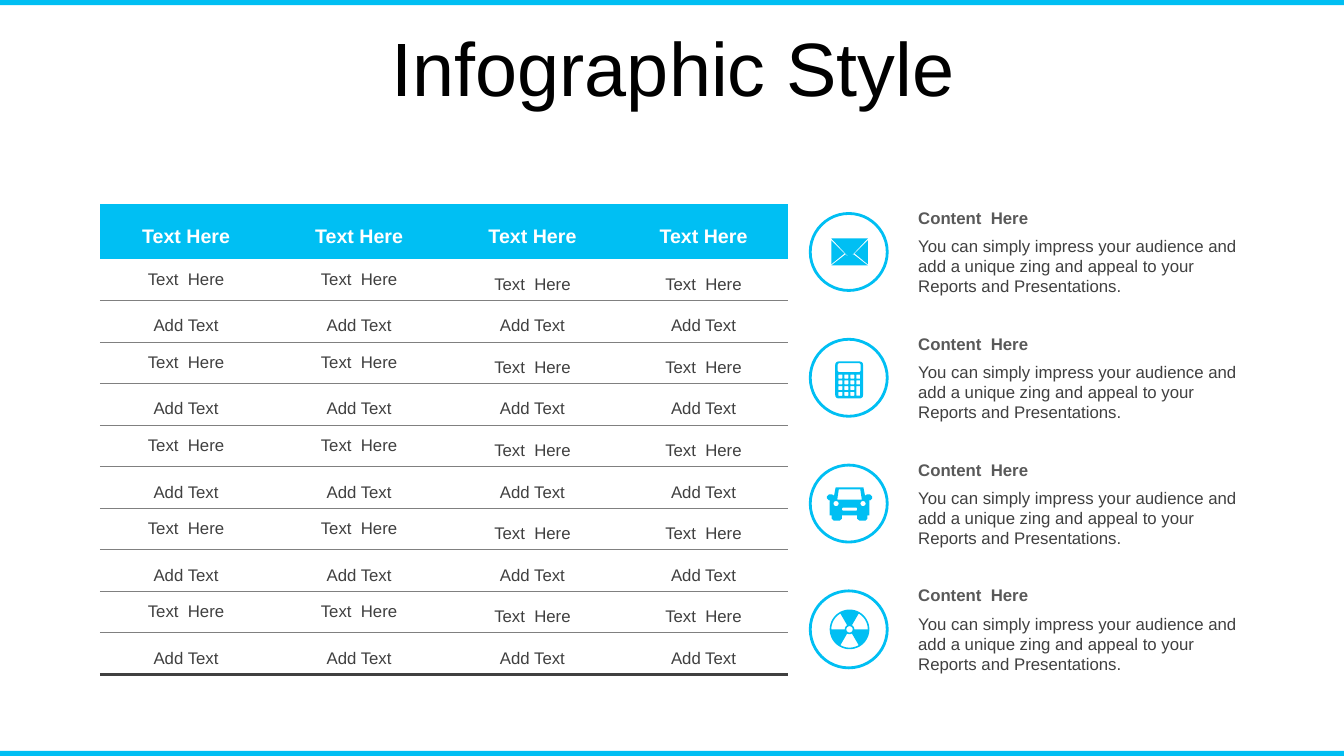
"""Build a slide with a ten-row table and four captioned icons."""
import math

import pptx
import pptx.dml.color
import pptx.enum.shapes
import pptx.enum.text
import pptx.oxml
import pptx.oxml.ns
import pptx.util
from pptx.util import Cm

ACCENT, WHITE, BLACK = "00BFF3", "FFFFFF", "000000"
DARK, HEADING, RULE = "404040", "595959", "808080"
COLUMN_WIDTHS = (4.34, 4.38, 4.36, 4.26)
HEADER_HEIGHT, ROW_HEIGHT, BODY_ROWS = 1.4, 1.046, 10
ITEM_STEP = 3.17
UNITS_PER_CM = 1000
ADVICE = ("You can simply impress your audience and add a unique zing "
          "and appeal to your Reports and Presentations.")
SHAPE = pptx.enum.shapes.MSO_SHAPE
ALIGN = pptx.enum.text.PP_ALIGN
ANCHOR = pptx.enum.text.MSO_ANCHOR


def rgb(color):
    """Turn a hex string into a colour."""
    return pptx.dml.color.RGBColor.from_string(color)


def write(frame, text, size=12, color=DARK, bold=False, align=ALIGN.LEFT,
          spacing=1.0, before=0):
    """Write one formatted paragraph into a text frame."""
    frame.word_wrap = True
    paragraph = frame.paragraphs[0]
    paragraph.alignment = align
    paragraph.line_spacing = spacing
    paragraph.space_before = pptx.util.Pt(before)
    run = paragraph.add_run()
    run.text = text
    run.font.name = "Arial"
    run.font.size = pptx.util.Pt(size)
    run.font.bold = bold
    run.font.color.rgb = rgb(color)


def add_text(shapes, left, top, width, height, text, anchor=ANCHOR.TOP, **style):
    """Add a text box."""
    frame = shapes.add_textbox(Cm(left), Cm(top), Cm(width), Cm(height)).text_frame
    frame.vertical_anchor = anchor
    write(frame, text, **style)


def paint(shape, fill, line=None):
    """Give a shape a flat fill and an optional outline."""
    shape.shadow.inherit = False
    shape.fill.solid()
    shape.fill.fore_color.rgb = rgb(fill)
    if line:
        shape.line.color.rgb = rgb(line)
        shape.line.width = pptx.util.Pt(2)
    else:
        shape.line.fill.background()


def add_shape(shapes, kind, left, top, width, height, fill, line=None):
    """Add a painted preset shape."""
    shape = shapes.add_shape(kind, Cm(left), Cm(top), Cm(width), Cm(height))
    paint(shape, fill, line)


def set_border(cell, side, color=None, width=1):
    """Set one side of a cell's border, or hide it when no colour is given."""
    namespace = pptx.oxml.ns.nsdecls("a")
    fill = (f'<a:solidFill><a:srgbClr val="{color}"/></a:solidFill>'
            if color else "<a:noFill/>")
    border = pptx.oxml.parse_xml(
        f'<a:ln{side} {namespace} w="{pptx.util.Pt(width)}">{fill}</a:ln{side}>')
    cell._tc.get_or_add_tcPr().append(border)


def fill_cell(cell, text, fill, top, bottom, **style):
    """Write, rule and fill one centred table cell."""
    for side, border in (("L", ()), ("R", ()), ("T", top), ("B", bottom)):
        set_border(cell, side, *border)
    cell.fill.solid()
    cell.fill.fore_color.rgb = rgb(fill)
    cell.vertical_anchor = ANCHOR.MIDDLE
    write(cell.text_frame, text, align=ALIGN.CENTER, **style)


def add_text_table(shapes):
    """Add the table with its header and alternating body rows."""
    height = HEADER_HEIGHT + BODY_ROWS * ROW_HEIGHT
    table = shapes.add_table(BODY_ROWS + 1, len(COLUMN_WIDTHS), Cm(2.52), Cm(5.13),
                             Cm(sum(COLUMN_WIDTHS)), Cm(height)).table
    table.horz_banding = False
    for column, width in zip(table.columns, COLUMN_WIDTHS):
        column.width = Cm(width)
    for index, row in enumerate(table.rows):
        row.height = Cm(ROW_HEIGHT if index else HEADER_HEIGHT)
        top = (RULE, 1) if index > 1 else ()
        bottom = (DARK, 2.25) if index == BODY_ROWS else (RULE, 1)
        for column, cell in enumerate(row.cells):
            if index == 0:
                fill_cell(cell, "Text Here", ACCENT, (), (), size=14,
                          color=WHITE, bold=True, spacing=1.5)
            elif index % 2:
                fill_cell(cell, "Text  Here", WHITE, top, bottom,
                          spacing=1.0 if column < 2 else 1.5)
            else:
                fill_cell(cell, "Add Text", WHITE, top, bottom, spacing=1.5)


def arc(x, y, radius, start, end, steps=12):
    """Return points along an arc, with angles in degrees."""
    angles = [math.radians(start + (end - start) * i / steps) for i in range(steps + 1)]
    return [(x + radius * math.cos(a), y + radius * math.sin(a)) for a in angles]


def disc(x, y, radius):
    """Return the outline of a circle."""
    return arc(x, y, radius, 0, 360, 48)


def rounded_box(left, top, width, height, radius):
    """Return the outline of a box with rounded corners."""
    right, bottom = left + width - radius, top + height - radius
    left, top = left + radius, top + radius
    corners = ((left, top, 180), (right, top, 270), (right, bottom, 0), (left, bottom, 90))
    return [point for x, y, start in corners
            for point in arc(x, y, radius, start, start + 90, 4)]


def mirrored(points):
    """Return points reflected across the vertical axis, in reverse order."""
    return [(-x, y) for x, y in reversed(points)]


def envelope():
    """Return the contours of the envelope."""
    side = [(0.46, -0.29), (0.46, 0.31), (0.13, 0.04)]
    flap = [(-0.46, -0.34), (0.46, -0.34), (0, 0.15)]
    base = [(0.1, 0.06), (0.46, 0.34), (-0.46, 0.34), (-0.1, 0.06), (0, 0.16)]
    return [base, side, mirrored(side), flap]


def calculator():
    """Return the contours of the calculator, with one double-height key."""
    body = rounded_box(-0.36, -0.41, 0.7, 0.93, 0.08)
    screen = rounded_box(-0.3, -0.37, 0.58, 0.23, 0.05)
    keys = [rounded_box(-0.28 + 0.15 * column, -0.08 + 0.145 * row, 0.1,
                        0.24 if (column, row) == (3, 2) else 0.1, 0.01)
            for column in range(4) for row in range(4) if (column, row) != (3, 3)]
    return [body, screen] + keys


def car():
    """Return the contours of the car seen from the front."""
    half = [(0.35, -0.41), (0.39, -0.2), (0.44, -0.23), (0.52, -0.23), (0.57, -0.18),
            (0.57, -0.13), (0.52, -0.08), (0.49, -0.08), (0.5, -0.05), (0.5, 0.3),
            (0.45, 0.3), (0.45, 0.38), (0.4, 0.43), (0.25, 0.43), (0.19, 0.38), (0.19, 0.3)]
    window = [(0.27, -0.36), (0.31, -0.1)]
    grille = rounded_box(-0.19, 0.1, 0.38, 0.08, 0.03)
    return [half + mirrored(half), window + mirrored(window), grille,
            disc(-0.34, 0, 0.065), disc(0.34, 0, 0.065)]


def radiation():
    """Return the contours of the radiation sign."""
    blades = [arc(0, 0, 0.46, start, start + 60) + arc(0, 0, 0.12, start + 60, start)
              for start in (60, 180, 300)]
    return [disc(0, 0, 0.5), disc(0, 0, 0.08)] + blades


def add_icon(shapes, x, y, contours):
    """Add an icon around a centre, drawn as one outline with holes."""
    scaled = [[(px * UNITS_PER_CM, py * UNITS_PER_CM) for px, py in contour]
              for contour in contours]
    builder = shapes.build_freeform(*scaled[0][0], scale=Cm(1) / UNITS_PER_CM)
    builder.add_line_segments(scaled[0][1:])
    for contour in scaled[1:]:
        builder.move_to(*contour[0])
        builder.add_line_segments(contour[1:])
    paint(builder.convert_to_shape(Cm(x), Cm(y)), ACCENT)


def add_item(shapes, offset, contours):
    """Add a ringed icon with its heading and advice."""
    add_shape(shapes, SHAPE.OVAL, 20.42, 5.38 + offset, 1.94, 1.94, WHITE, ACCENT)
    add_icon(shapes, 21.41, 6.35 + offset, contours)
    caption = shapes.add_group_shape().shapes
    add_text(caption, 22.89, 5.11 + offset, 8.69, 0.76, "Content  Here",
             anchor=ANCHOR.MIDDLE, color=HEADING, bold=True)
    add_text(caption, 22.89, 5.82 + offset, 8.69, 1.8, ADVICE)


def main():
    """Build and save the slide."""
    deck = pptx.Presentation()
    deck.slide_width, deck.slide_height = Cm(33.87), Cm(19.05)
    shapes = deck.slides.add_slide(deck.slide_layouts[6]).shapes
    for top in (0, 18.92):
        add_shape(shapes, SHAPE.RECTANGLE, 0, top, 33.87, 0.13, ACCENT)
    add_text(shapes, 0.89, 0.81, 32.16, 2.01, "Infographic Style", anchor=ANCHOR.MIDDLE,
             size=54, color=BLACK, align=ALIGN.CENTER, spacing=0.9, before=10)
    add_text_table(shapes)
    for index, icon in enumerate((envelope, calculator, car, radiation)):
        add_item(shapes, index * ITEM_STEP, icon())
    deck.save("out.pptx")


if __name__ == "__main__":
    main()
